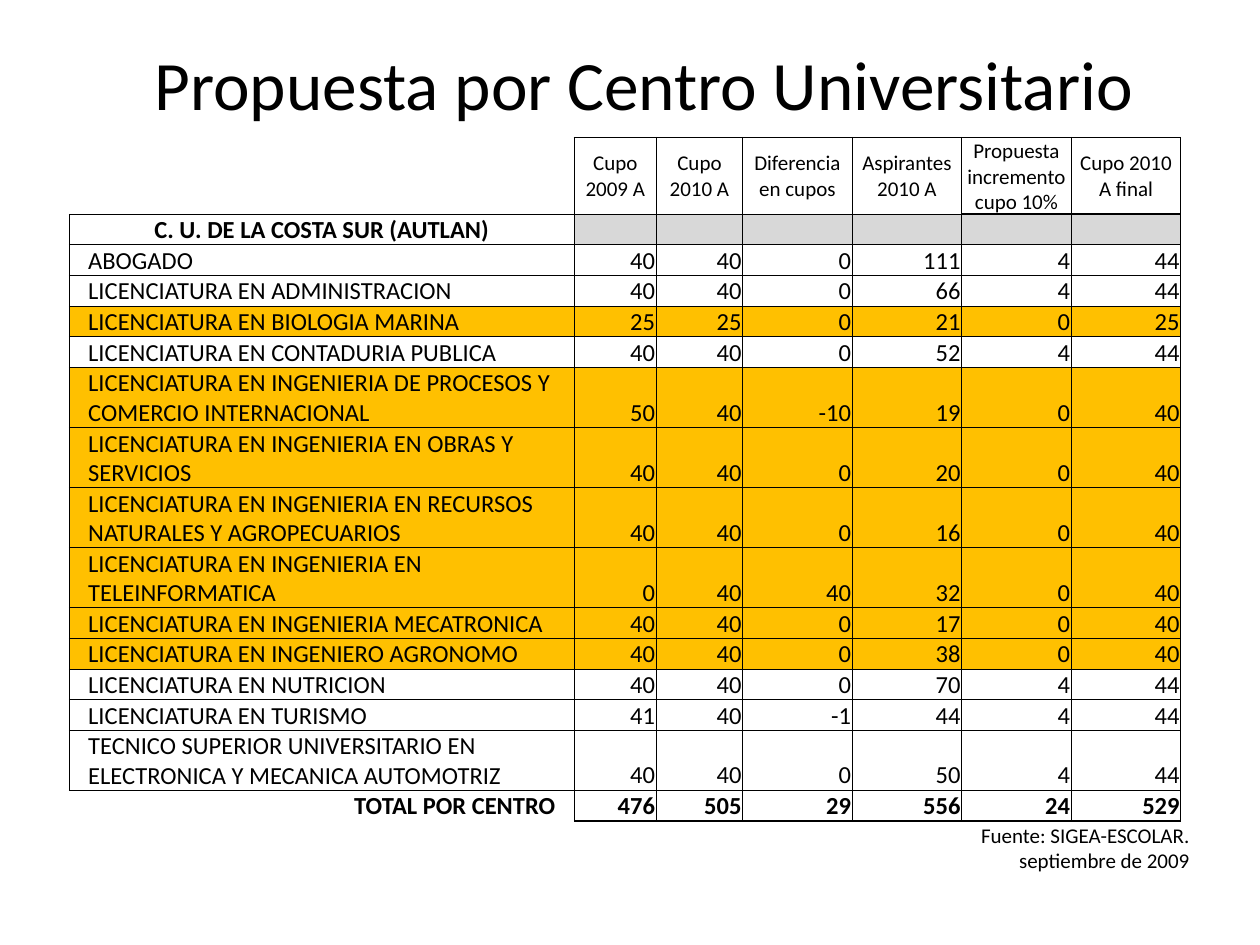
from dataclasses import dataclass

import pptx
import pptx.dml.color
import pptx.enum.text
import pptx.oxml
import pptx.oxml.ns
import pptx.util
from pptx.enum.text import MSO_ANCHOR, PP_ALIGN
from pptx.util import Pt

BLACK = pptx.dml.color.RGBColor(0x00, 0x00, 0x00)
GRAY = pptx.dml.color.RGBColor(0xD8, 0xD8, 0xD8)
AMBER = pptx.dml.color.RGBColor(0xFF, 0xC0, 0x00)
WHITE = pptx.dml.color.RGBColor(0xFF, 0xFF, 0xFF)

FONT = "Calibri"
BODY_SIZE = 14
SMALL_SIZE = 12
THIN, THICK = 0.5, 1
CELL_MARGIN, INDENT = 0.7, 10.8
COLUMN_WIDTHS = [288.6, 46.8, 49.4] + [62.6] * 4
HEADER_HEIGHT, LINE_HEIGHT = 40.3, 15.8


@dataclass(frozen=True)
class Degree:
    name: str
    places_2009: int
    places_2010: int
    applicants: int
    increase: int
    lines: int = 1

    @property
    def values(self) -> list[int]:
        return [self.places_2009, self.places_2010,
                self.places_2010 - self.places_2009, self.applicants,
                self.increase, self.places_2010 + self.increase]


HEADERS = ["Cupo 2009 A", "Cupo 2010 A", "Diferencia en cupos", "Aspirantes 2010 A",
           "Propuesta incremento cupo 10%", "Cupo 2010 A final"]
DEGREES = [
    Degree("ABOGADO", 40, 40, 111, 4),
    Degree("LICENCIATURA EN ADMINISTRACION", 40, 40, 66, 4),
    Degree("LICENCIATURA EN BIOLOGIA MARINA", 25, 25, 21, 0),
    Degree("LICENCIATURA EN CONTADURIA PUBLICA", 40, 40, 52, 4),
    Degree("LICENCIATURA EN INGENIERIA DE PROCESOS Y COMERCIO INTERNACIONAL", 50, 40, 19, 0, 2),
    Degree("LICENCIATURA EN INGENIERIA EN OBRAS Y SERVICIOS", 40, 40, 20, 0, 2),
    Degree("LICENCIATURA EN INGENIERIA EN RECURSOS NATURALES Y AGROPECUARIOS", 40, 40, 16, 0, 2),
    Degree("LICENCIATURA EN INGENIERIA EN TELEINFORMATICA", 0, 40, 32, 0, 2),
    Degree("LICENCIATURA EN INGENIERIA MECATRONICA", 40, 40, 17, 0),
    Degree("LICENCIATURA EN INGENIERO AGRONOMO", 40, 40, 38, 0),
    Degree("LICENCIATURA EN NUTRICION", 40, 40, 70, 4),
    Degree("LICENCIATURA EN TURISMO", 41, 40, 44, 4),
    Degree("TECNICO SUPERIOR UNIVERSITARIO EN ELECTRONICA Y MECANICA AUTOMOTRIZ",
           40, 40, 50, 4, 2),
]
TOTALS = [476, 505, 29, 556, 24, 529]


def write_text(text_frame, text: str, *, size: float = BODY_SIZE, bold: bool = False,
               align=PP_ALIGN.LEFT) -> None:
    """Write one paragraph per line of text."""
    for index, line in enumerate(text.split("\n")):
        paragraph = text_frame.add_paragraph() if index else text_frame.paragraphs[0]
        paragraph.alignment = align
        if not line:
            # An empty cell keeps the row low only with an explicit size
            end = pptx.oxml.ns.qn("a:endParaRPr")
            paragraph._p.makeelement(end, {"sz": str(int(size * 100))})
            paragraph._p.append(paragraph._p.makeelement(end, {"sz": str(int(size * 100))}))
            continue
        run = paragraph.add_run()
        run.text = line
        run.font.name = FONT
        run.font.size = Pt(size)
        run.font.bold = bold
        run.font.color.rgb = BLACK


def add_text_box(slide, left: float, top: float, width: float, height: float, text: str,
                 *, anchor=MSO_ANCHOR.TOP, **text_format) -> None:
    text_frame = slide.shapes.add_textbox(Pt(left), Pt(top), Pt(width), Pt(height)).text_frame
    text_frame.word_wrap = True
    text_frame.vertical_anchor = anchor
    write_text(text_frame, text, **text_format)


def set_borders(cell, widths: dict[str, float]) -> None:
    """Draw the sides L, R, T and B; a width of zero hides the side."""
    properties = cell._tc.get_or_add_tcPr()
    namespace = pptx.oxml.ns.nsdecls("a")
    for index, side in enumerate("LRTB"):
        width = widths[side]
        paint = f'<a:solidFill><a:srgbClr val="{BLACK}"/></a:solidFill>' if width else "<a:noFill/>"
        line = pptx.oxml.parse_xml(
            f'<a:ln{side} {namespace} w="{int(Pt(width))}">{paint}</a:ln{side}>')
        properties.insert(index, line)


def border_widths(row: int, column: int, last_row: int) -> dict[str, float]:
    widths = dict.fromkeys("LRTB", THIN)
    if row == 0:
        if column == 0:
            widths.update(L=0, T=0, R=THICK)
        elif column == 1:
            widths["L"] = THICK
        elif column >= 5:
            widths["B"] = THICK
    elif row == 1 and column >= 5:
        widths["T"] = THICK
    elif row == last_row:
        widths.update(dict(L=0, B=0) if column == 0 else dict(B=THICK))
    return widths


def fill_cell(cell, text: str, *, fill=None, anchor=MSO_ANCHOR.BOTTOM,
              left: float = CELL_MARGIN, right: float = CELL_MARGIN, **text_format) -> None:
    cell.margin_left, cell.margin_right = Pt(left), Pt(right)
    cell.margin_top, cell.margin_bottom = Pt(CELL_MARGIN), Pt(0)
    cell.vertical_anchor = anchor
    if fill is None:
        cell.fill.background()
    else:
        cell.fill.solid()
        cell.fill.fore_color.rgb = fill
    write_text(cell.text_frame, text, **text_format)


def add_places_table(slide) -> None:
    heights = ([HEADER_HEIGHT, LINE_HEIGHT]
               + [degree.lines * LINE_HEIGHT for degree in DEGREES] + [LINE_HEIGHT])
    last_row, last_column = len(heights) - 1, len(COLUMN_WIDTHS) - 1
    table = slide.shapes.add_table(len(heights), len(COLUMN_WIDTHS), Pt(39.6), Pt(78.5),
                                   Pt(sum(COLUMN_WIDTHS)), Pt(sum(heights))).table
    table.first_row = table.horz_banding = False
    for column, width in zip(table.columns, COLUMN_WIDTHS):
        column.width = Pt(width)
    for row, height in zip(table.rows, heights):
        row.height = Pt(height)

    # Column headings and centre name
    fill_cell(table.cell(0, 0), "", size=SMALL_SIZE)
    fill_cell(table.cell(1, 0), "C. U. DE LA COSTA SUR (AUTLAN)", bold=True,
              align=PP_ALIGN.CENTER)
    for column, header in enumerate(HEADERS, 1):
        fill_cell(table.cell(0, column), header, size=SMALL_SIZE, align=PP_ALIGN.CENTER,
                  anchor=MSO_ANCHOR.MIDDLE)
        fill_cell(table.cell(1, column), "", fill=GRAY)

    # Degrees; those without an increase are highlighted
    for row, degree in enumerate(DEGREES, 2):
        fill = None if degree.increase else AMBER
        fill_cell(table.cell(row, 0), degree.name, fill=fill, left=INDENT)
        for column, value in enumerate(degree.values, 1):
            cell_fill = fill or (WHITE if column == last_column else None)
            fill_cell(table.cell(row, column), str(value), fill=cell_fill, align=PP_ALIGN.RIGHT)

    # Totals
    fill_cell(table.cell(last_row, 0), "TOTAL POR CENTRO", bold=True, right=INDENT,
              align=PP_ALIGN.RIGHT)
    for column, total in enumerate(TOTALS, 1):
        fill_cell(table.cell(last_row, column), str(total), bold=True, align=PP_ALIGN.RIGHT)

    for row in range(last_row + 1):
        for column in range(last_column + 1):
            set_borders(table.cell(row, column), border_widths(row, column, last_row))


def main() -> None:
    presentation = pptx.Presentation()
    presentation.slide_width, presentation.slide_height = Pt(720), Pt(540)
    slide = presentation.slides.add_slide(presentation.slide_layouts[6])

    # Title, source note and table
    add_text_box(slide, 62, 16.5, 612, 62, "Propuesta por Centro Universitario",
                 size=39.6, align=PP_ALIGN.CENTER, anchor=MSO_ANCHOR.MIDDLE)
    add_text_box(slide, 500.4, 466.6, 186.5, 36, "Fuente: SIGEA-ESCOLAR.\nseptiembre de 2009",
                 size=SMALL_SIZE, align=PP_ALIGN.RIGHT)
    add_places_table(slide)
    presentation.save("out.pptx")


if __name__ == "__main__":
    main()
